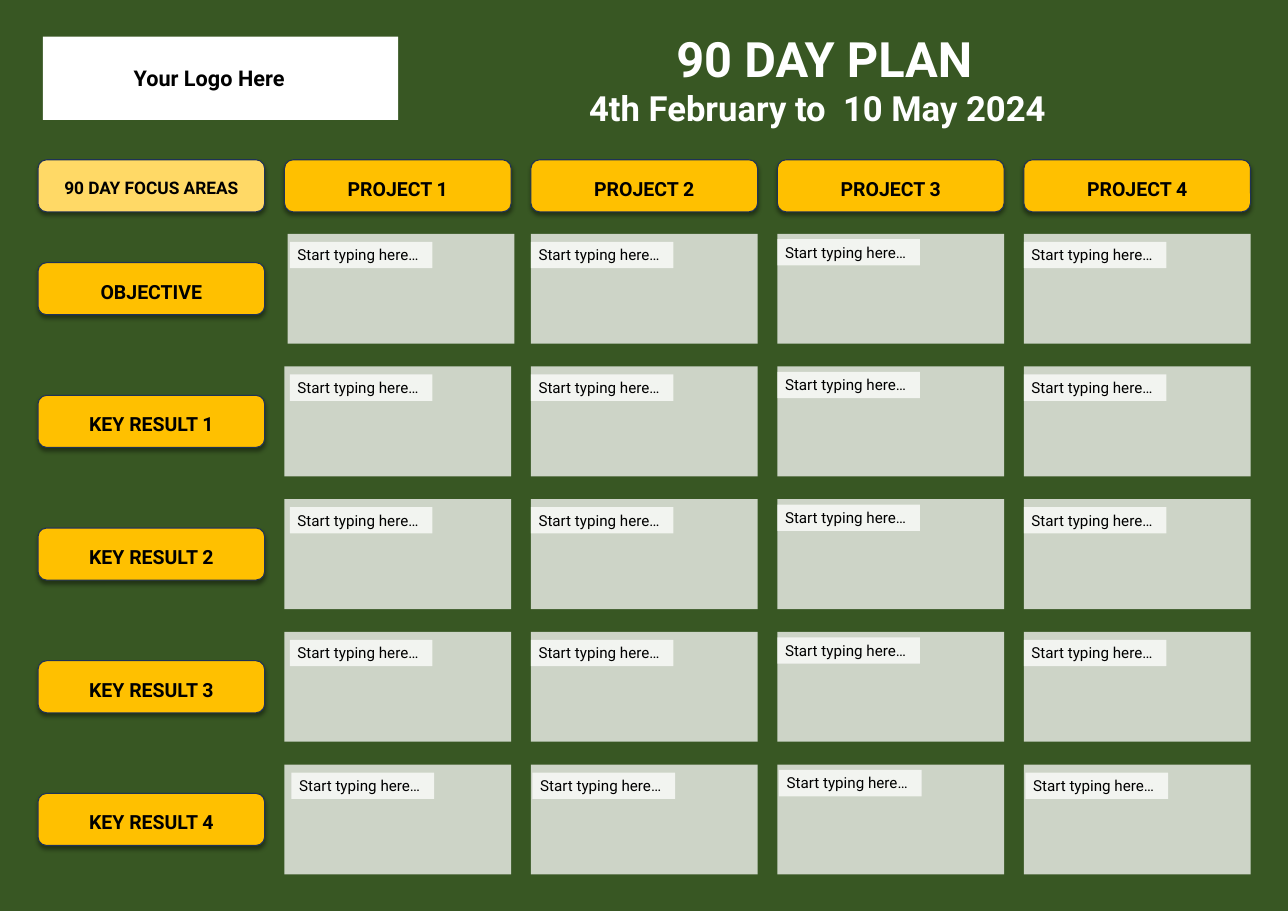
from lxml.etree import SubElement
from pptx import Presentation
from pptx.dml.color import RGBColor as Rgb
from pptx.enum.shapes import MSO_SHAPE as Shape
from pptx.enum.text import MSO_ANCHOR as Anchor, MSO_AUTO_SIZE as Fit, PP_ALIGN as Align
from pptx.oxml.ns import qn
from pptx.util import Pt

TITLE = "90 DAY PLAN"
DATES = "4th February to  10 May 2024"
LOGO = "Your Logo Here"
FOCUS = "90 DAY FOCUS AREAS"
PROJECTS = ["PROJECT 1", "PROJECT 2", "PROJECT 3", "PROJECT 4"]
GOALS = ["OBJECTIVE", "KEY RESULT 1", "KEY RESULT 2", "KEY RESULT 3", "KEY RESULT 4"]
PROMPT = "Start typing here…"

COLORS = {"green": "385723", "white": "FFFFFF", "black": "000000",
          "gold": "FFC000", "pale": "FFD966", "navy": "1E3256"}
FONT = "Roboto"

LEFT, COL_STEP, CELL_W = 35.1, 227.75, 209.5
HEAD_TOP, BTN_H = 147.6, 48.2
ROW_TOP, ROW_STEP, CARD_H = 216, 122.6, 101.5
BTN_DROP = (CARD_H - BTN_H) / 2
NOTE_W, NOTE_H = 131.8, 24.3
NOTE_SHIFT = [(5, 7.4), (0, 7.4), (0, 5), (0, 7.4)]  # per project column


def color(name):
    return Rgb.from_string(COLORS[name])


def write(shape, text, size, ink="black", bold=True, align=Align.CENTER, anchor=Anchor.MIDDLE):
    frame = shape.text_frame
    frame.text = text
    frame.word_wrap = True
    frame.auto_size = Fit.NONE
    frame.vertical_anchor = anchor
    para = frame.paragraphs[0]
    para.alignment = align
    para.line_spacing = 1
    para.space_before = Pt(0)
    font = para.runs[0].font
    font.name, font.size, font.bold = FONT, Pt(size), bold
    font.color.rgb = color(ink)
    return frame


def place(shape, *box):
    shape.left, shape.top, shape.width, shape.height = map(Pt, box)


def add_box(kind, box, fill, alpha=None):
    shape = slide.shapes.add_shape(kind, *map(Pt, box))
    shape.shadow.inherit = False
    shape.fill.solid()
    shape.fill.fore_color.rgb = color(fill)
    shape.line.fill.background()
    if alpha:
        tint = shape.fill._xPr.find(".//" + qn("a:srgbClr"))
        SubElement(tint, qn("a:alpha"), val=str(alpha * 1000))
    return shape


def add_button(x, y, text, fill="gold", size=18, drop=5):
    """Rounded label with a soft shadow; drop is the top inset."""
    shape = add_box(Shape.ROUNDED_RECTANGLE, (x, y, CELL_W, BTN_H), fill)
    shape.line.color.rgb = color("navy")
    shape.line.width = Pt(1)
    effects = shape._element.spPr.find(qn("a:effectLst"))
    shade = SubElement(effects, qn("a:outerShdw"), blurRad=str(Pt(4)), dist=str(Pt(3)),
                       dir="5400000", algn="t", rotWithShape="0")
    tint = SubElement(shade, qn("a:srgbClr"), val=COLORS["black"])
    SubElement(tint, qn("a:alpha"), val="40000")
    frame = write(shape, text, size)
    frame.margin_top, frame.margin_bottom = Pt(drop), Pt(0)


def col_x(col):
    return LEFT + col * COL_STEP


def row_y(row):
    return ROW_TOP + row * ROW_STEP


deck = Presentation()
deck.slide_width, deck.slide_height = Pt(1190.2), Pt(841.7)
slide = deck.slides.add_slide(deck.slide_layouts[0])
slide.background.fill.solid()
slide.background.fill.fore_color.rgb = color("green")

title, dates = slide.placeholders
place(title, 593.3, 23, 337, 62)
write(title, TITLE, 45, "white", anchor=Anchor.TOP)
place(dates, 472.3, 76.3, 566.6, 46)
write(dates, DATES, 32, "white", anchor=Anchor.TOP)

logo = add_box(Shape.RECTANGLE, (39.6, 33.8, 328.3, 77), "white")
frame = write(logo, LOGO, 20)
frame.margin_left, frame.margin_right = Pt(0), Pt(21)

for col in range(len(PROJECTS)):
    dx, dy = NOTE_SHIFT[col]
    for row in range(len(GOALS)):
        x, y = col_x(col + 1), row_y(row)
        nudge = 2.9 if col == row == 0 else 0
        add_box(Shape.RECTANGLE, (x + nudge, y, CELL_W, CARD_H), "white", 75)
        inset = dx + (1.5 if row == len(GOALS) - 1 else 0)
        note = add_box(Shape.RECTANGLE, (x + inset, y + dy, NOTE_W, NOTE_H), "white", 75)
        write(note, PROMPT, 14, bold=False, align=Align.LEFT, anchor=Anchor.TOP)

add_button(LEFT, HEAD_TOP, FOCUS, "pale", 16, 3)
for col, name in enumerate(PROJECTS, 1):
    add_button(col_x(col), HEAD_TOP, name)
for row, name in enumerate(GOALS):
    add_button(LEFT, row_y(row) + BTN_DROP, name)

deck.save("out.pptx")
